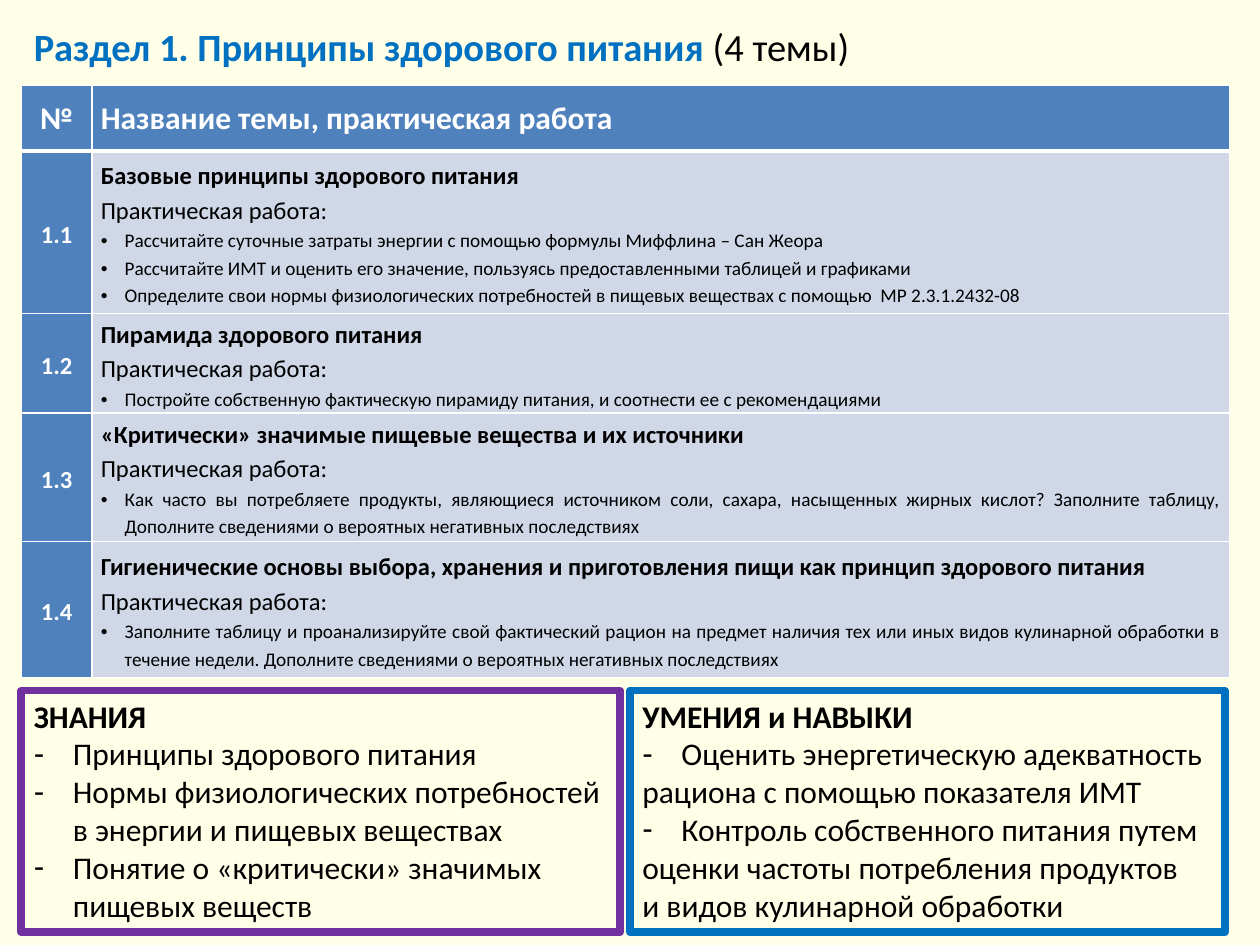
from lxml import etree
from pptx import Presentation, util as u
from pptx.dml.color import RGBColor
from pptx.enum import shapes, text
from pptx.oxml import ns

COLORS = {"page": "FFFFE8", "head": "4F81BD", "body": "D0D8E8", "white": "FFFFFF",
          "black": "000000", "blue": "0070C0", "purple": "7030A0"}
TOPICS = [
    ("1.1", "Базовые принципы здорового питания", [
        "Рассчитайте суточные затраты энергии с помощью формулы Миффлина – Сан Жеора",
        "Рассчитайте ИМТ и оценить его значение, пользуясь предоставленными таблицей и графиками",
        "Определите свои нормы физиологических потребностей в пищевых веществах с помощью  МР 2.3.1.2432-08"]),
    ("1.2", "Пирамида здорового питания", [
        "Постройте собственную фактическую пирамиду питания, и соотнести ее с рекомендациями"]),
    ("1.3", "«Критически» значимые пищевые вещества и их источники", [
        "Как часто вы потребляете продукты, являющиеся источником соли, сахара, насыщенных жирных кислот? "
        "Заполните таблицу, Дополните сведениями о вероятных негативных последствиях"]),
    ("1.4", "Гигиенические основы выбора, хранения и приготовления пищи как принцип здорового питания", [
        "Заполните таблицу и проанализируйте свой фактический рацион на предмет наличия тех или иных видов "
        "кулинарной обработки в течение недели. Дополните сведениями о вероятных негативных последствиях"]),
]
KNOWLEDGE = [("Принципы здорового питания", "-"),
             ("Нормы физиологических потребностей в энергии и пищевых веществах", "-"),
             ("Понятие о «критически» значимых пищевых веществ", "-")]
SKILLS = [("Оценить энергетическую адекватность", "-"),
          ("рациона с помощью показателя ИМТ", None),
          ("Контроль собственного питания путем", "-"),
          ("оценки частоты потребления продуктов", None),
          ("и видов кулинарной обработки", None)]


def rgb(name):
    """Return the palette colour as an RGBColor."""
    return RGBColor.from_string(COLORS[name])


def add_run(paragraph, words, size=18, color="black", bold=False):
    """Append one formatted run to a paragraph."""
    run = paragraph.add_run()
    run.text = words
    run.font.name = "Calibri"
    run.font.size = u.Pt(size)
    run.font.bold = bold
    run.font.color.rgb = rgb(color)


def write(frame, words, align=text.PP_ALIGN.LEFT, spacing=None, bullet=None, indent=0.31, **font):
    """Add a paragraph, reusing the first one while it is empty."""
    first = frame.paragraphs[0]
    paragraph = frame.add_paragraph() if first.runs else first
    paragraph.alignment = align
    if spacing:
        paragraph.line_spacing = spacing
    if bullet:
        props = paragraph._p.get_or_add_pPr()
        props.set("marL", str(u.Inches(indent)))
        props.set("indent", str(-u.Inches(indent)))
        etree.SubElement(props, ns.qn("a:buFont"), typeface="Arial")
        etree.SubElement(props, ns.qn("a:buChar"), char=bullet)
    add_run(paragraph, words, **font)
    return paragraph


def add_title(slide, left, top, width, height):
    """Place the section heading."""
    frame = slide.shapes.add_textbox(left, top, width, height).text_frame
    frame.word_wrap = True
    heading = write(frame, "Раздел 1. Принципы здорового питания ", size=22, color="blue", bold=True)
    add_run(heading, "(4 темы)", size=22)


def style_cell(cell, fill, bottom=1):
    """Set borders, margins and fill of a table cell."""
    props = cell._tc.get_or_add_tcPr()
    for side, weight in (("L", 1), ("R", 1), ("T", 1), ("B", bottom)):
        border = etree.SubElement(props, ns.qn(f"a:ln{side}"), w=str(u.Pt(weight)))
        paint = etree.SubElement(border, ns.qn("a:solidFill"))
        etree.SubElement(paint, ns.qn("a:srgbClr"), val=COLORS["white"])
    cell.fill.solid()
    cell.fill.fore_color.rgb = rgb(fill)
    cell.vertical_anchor = text.MSO_ANCHOR.MIDDLE
    cell.margin_left = cell.margin_right = u.Inches(0.07)
    cell.margin_top = cell.margin_bottom = 0


def add_topics(slide, left, top, width, height):
    """Place the table of topics and practical work."""
    table = slide.shapes.add_table(len(TOPICS) + 1, 2, left, top, width, height).table
    table.horz_banding = False
    number_width = u.Inches(0.56)
    table.columns[0].width = number_width
    table.columns[1].width = width - number_width
    for row, row_height in zip(table.rows, (0.52, 1.29, 0.79, 1.02, 1.08)):
        row.height = u.Inches(row_height)

    center, justify = text.PP_ALIGN.CENTER, text.PP_ALIGN.JUSTIFY
    headings = (("№", center), ("Название темы, практическая работа", text.PP_ALIGN.LEFT))
    for column, (heading, align) in enumerate(headings):
        cell = table.cell(0, column)
        style_cell(cell, "head", bottom=3)
        write(cell.text_frame, heading, align=align, color="white", bold=True)

    for row, (number, topic, tasks) in enumerate(TOPICS, 1):
        number_cell, topic_cell = table.cell(row, 0), table.cell(row, 1)
        style_cell(number_cell, "head")
        style_cell(topic_cell, "body")
        write(number_cell.text_frame, number, align=center, spacing=1.15,
              size=14, color="white", bold=True)
        frame = topic_cell.text_frame
        write(frame, topic, align=justify, spacing=1.15, size=14, bold=True)
        write(frame, "Практическая работа:", align=justify, spacing=1.15, size=14)
        for task in tasks:
            write(frame, task, align=justify, spacing=1.15, bullet="•", indent=0.19, size=11)


def add_outcomes(slide, left, top, width, height, heading, lines, color):
    """Place a framed list of learning outcomes."""
    box = slide.shapes.add_shape(shapes.MSO_SHAPE.RECTANGLE, left, top, width, height)
    box.shadow.inherit = False
    box.fill.background()
    box.line.color.rgb = rgb(color)
    box.line.width = u.Pt(4.5)
    frame = box.text_frame
    frame.word_wrap = True
    frame.vertical_anchor = text.MSO_ANCHOR.TOP
    write(frame, heading, bold=True)
    for words, bullet in lines:
        write(frame, words, bullet=bullet)


def main():
    """Build and save the slide."""
    deck = Presentation()
    deck.slide_width, deck.slide_height = u.Inches(10), u.Inches(7.5)
    slide = deck.slides.add_slide(deck.slide_layouts[6])
    slide.background.fill.solid()
    slide.background.fill.fore_color.rgb = rgb("page")
    left, outcomes_top, outcomes_height = u.Inches(0.17), u.Inches(5.48), u.Inches(1.92)
    add_title(slide, left, u.Inches(0.13), u.Inches(9.53), u.Inches(0.55))
    add_topics(slide, left, u.Inches(0.68), u.Inches(9.59), u.Inches(4.7))
    add_outcomes(slide, left, outcomes_top, u.Inches(4.75), outcomes_height,
                 "ЗНАНИЯ", KNOWLEDGE, "purple")
    add_outcomes(slide, u.Inches(5), outcomes_top, u.Inches(4.72), outcomes_height,
                 "УМЕНИЯ и НАВЫКИ", SKILLS, "blue")
    deck.save("out.pptx")


if __name__ == "__main__":
    main()
